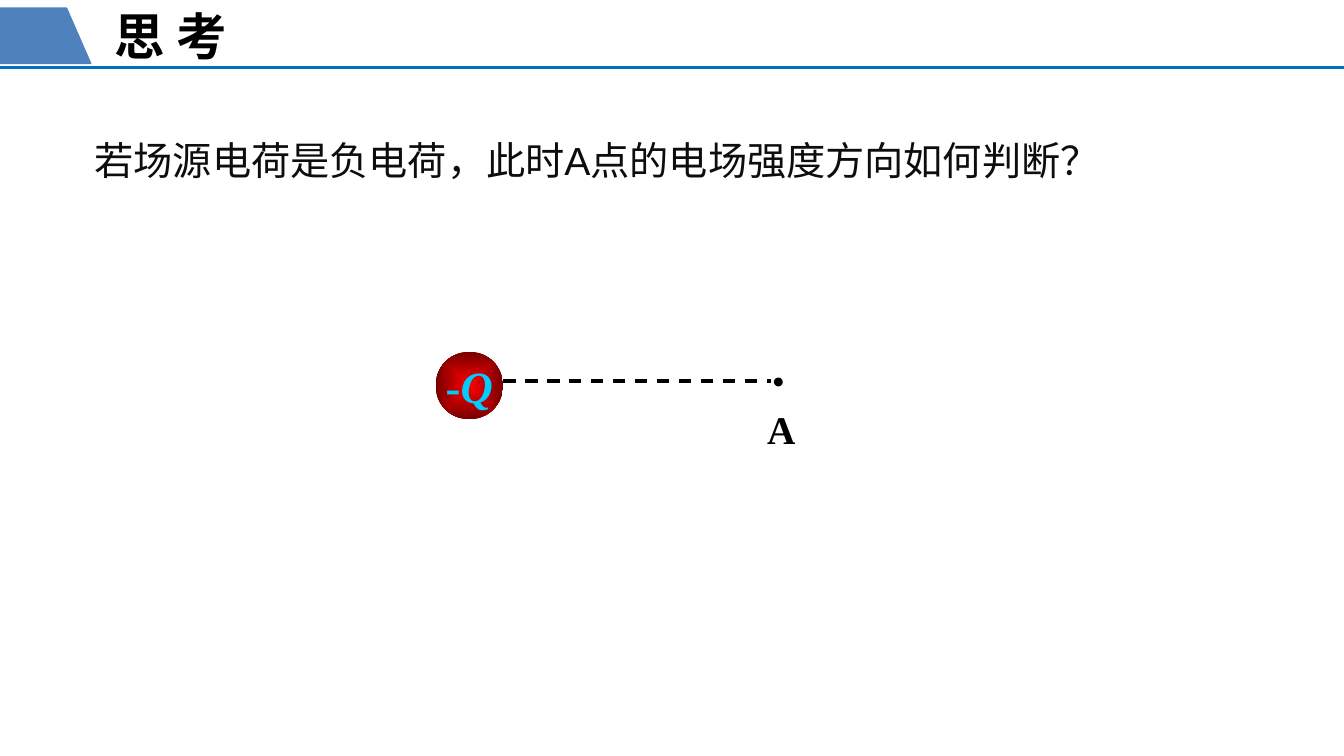
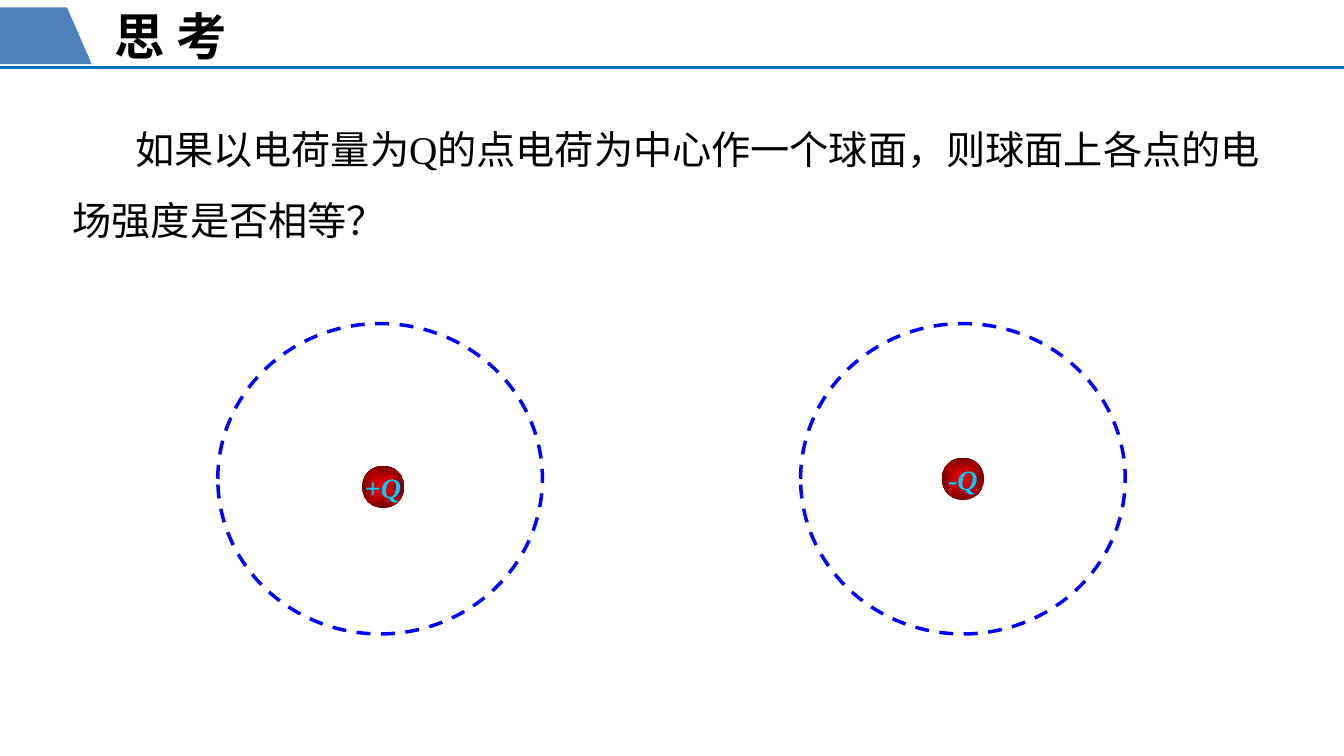
from lxml import etree
from pptx import Presentation
from pptx.dml.color import RGBColor
from pptx.enum.dml import MSO_LINE_DASH_STYLE as Dash
from pptx.enum.shapes import MSO_CONNECTOR as Connector, MSO_SHAPE as Preset
from pptx.enum.text import MSO_ANCHOR as Anchor, PP_ALIGN as Align
from pptx.oxml import parse_xml
from pptx.oxml.ns import qn
from pptx.util import Inches, Pt

SERIF, SANS = "Times New Roman", "Arial"
BLACK, INK, CYAN = "000000", "0D0D0D", "00CCFF"
TAB_BLUE, RULE_BLUE, SPHERE_BLUE = "4F81BD", "0070C0", "0000FF"
CHARGE_CENTRE, CHARGE_EDGE = "FF0000", "760000"
SLIDE_WIDTH, SLIDE_HEIGHT = 13.33, 7.5

TITLE = "思 考"
TAB_OUTLINE = [(0, 0.08), (0.66, 0.08), (0.9, 0.63), (0, 0.63)]
RULE_TOP = 0.67

DIRECTION_QUESTION = "若场源电荷是负电荷，此时A点的电场强度方向如何判断？"
SOURCE_CHARGE = ("-", 4.32, 3.49, 0.67, 31.9)
FIELD_LINE = [(4.99, 3.78), (7.65, 3.78)]
POINT_A = (7.69, 3.76, 0.06, 0.06)

SPHERE_QUESTION = "如果以电荷量为Q的点电荷为中心作一个球面，则球面上各点的电场强度是否相等？"
SPHERE_LEFTS = [2.16, 7.94]
SPHERE_TOP, SPHERE_WIDTH, SPHERE_HEIGHT = 3.21, 3.22, 3.08
CENTRE_CHARGES = [("+", 3.59, 4.62, 0.42, 20), ("-", 9.34, 4.54, 0.42, 20)]

RADIAL = (
    '<a:path xmlns:a="http://schemas.openxmlformats.org/drawingml/2006/main" path="shape">'
    '<a:fillToRect l="50000" t="50000" r="50000" b="50000"/></a:path>'
)


def rgb(value):
    return RGBColor.from_string(value)


def set_line(line, color, width, dash=None):
    line.color.rgb = rgb(color)
    line.width = Pt(width)
    if dash:
        line.dash_style = dash


def add_run(paragraph, text, size, color=BLACK, font=SERIF, bold=False, italic=None):
    run = paragraph.add_run()
    run.text = text
    run.font.name = font
    run.font.size = Pt(size)
    run.font.bold = bold
    run.font.italic = italic
    run.font.color.rgb = rgb(color)


def add_text(slide, box, text, size, **style):
    shape = slide.shapes.add_textbox(*map(Inches, box))
    frame = shape.text_frame
    frame.word_wrap = True
    add_run(frame.paragraphs[0], text, size, **style)
    return frame


def add_ellipse(slide, left, top, width, height):
    shape = slide.shapes.add_shape(Preset.OVAL, *map(Inches, (left, top, width, height)))
    shape.shadow.inherit = False
    return shape


def add_connector(slide, start, end, color, width, dash=None):
    connector = slide.shapes.add_connector(Connector.STRAIGHT, *map(Inches, (*start, *end)))
    set_line(connector.line, color, width, dash)
    etree.SubElement(connector._element.spPr, qn("a:effectLst"))


def add_charge(slide, sign, left, top, diameter, size):
    shape = add_ellipse(slide, left, top, diameter, diameter)
    shape.line.fill.background()
    shape.fill.gradient()
    for stop, color in zip(shape.fill.gradient_stops, (CHARGE_CENTRE, CHARGE_EDGE)):
        stop.color.rgb = rgb(color)
    gradient = shape._element.spPr.find(qn("a:gradFill"))
    gradient.replace(gradient.find(qn("a:lin")), parse_xml(RADIAL))
    frame = shape.text_frame
    frame.word_wrap = False
    frame.vertical_anchor = Anchor.MIDDLE
    paragraph = frame.paragraphs[0]
    paragraph.alignment = Align.CENTER
    add_run(paragraph, sign, size, CYAN, bold=True)
    add_run(paragraph, "Q", size, CYAN, bold=True, italic=True)


def add_titled_slide(presentation):
    slide = presentation.slides.add_slide(presentation.slide_layouts[6])
    add_text(slide, (1.04, 0, 11.14, 0.58), TITLE, 36, bold=True)
    first, *others = [tuple(map(Inches, point)) for point in TAB_OUTLINE]
    builder = slide.shapes.build_freeform(*first)
    builder.add_line_segments(others, close=True)
    tab = builder.convert_to_shape()
    tab.shadow.inherit = False
    tab.fill.solid()
    tab.fill.fore_color.rgb = rgb(TAB_BLUE)
    set_line(tab.line, TAB_BLUE, 1)
    add_connector(slide, (0, RULE_TOP), (SLIDE_WIDTH, RULE_TOP), RULE_BLUE, 1.5)
    return slide


def build_direction_slide(presentation):
    slide = add_titled_slide(presentation)
    add_charge(slide, *SOURCE_CHARGE)
    add_connector(slide, *FIELD_LINE, BLACK, 2.25, Dash.DASH)
    add_text(slide, (7.51, 3.97, 0.58, 0.57), "A", 28, bold=True)
    point = add_ellipse(slide, *POINT_A)
    point.fill.solid()
    point.fill.fore_color.rgb = rgb(BLACK)
    set_line(point.line, BLACK, 2)
    add_text(slide, (0.84, 1.3, 10.79, 0.57), DIRECTION_QUESTION, 28, color=INK, font=SANS)


def build_sphere_slide(presentation):
    slide = add_titled_slide(presentation)
    frame = add_text(slide, (0.6, 0.99, 12.34, 1.44), SPHERE_QUESTION, 28)
    frame.vertical_anchor = Anchor.MIDDLE
    frame.margin_left = frame.margin_right = Inches(0.12)
    frame.margin_top = frame.margin_bottom = Inches(0.06)
    paragraph = frame.paragraphs[0]
    paragraph.line_spacing = 1.5
    paragraph._p.get_or_add_pPr().set("indent", str(Inches(0.62)))
    for left in SPHERE_LEFTS:
        sphere = add_ellipse(slide, left, SPHERE_TOP, SPHERE_WIDTH, SPHERE_HEIGHT)
        sphere.fill.background()
        set_line(sphere.line, SPHERE_BLUE, 2.5, Dash.DASH)
    for charge in CENTRE_CHARGES:
        add_charge(slide, *charge)


def main():
    presentation = Presentation()
    presentation.slide_width = Inches(SLIDE_WIDTH)
    presentation.slide_height = Inches(SLIDE_HEIGHT)
    build_direction_slide(presentation)
    build_sphere_slide(presentation)
    presentation.save("out.pptx")


if __name__ == "__main__":
    main()
